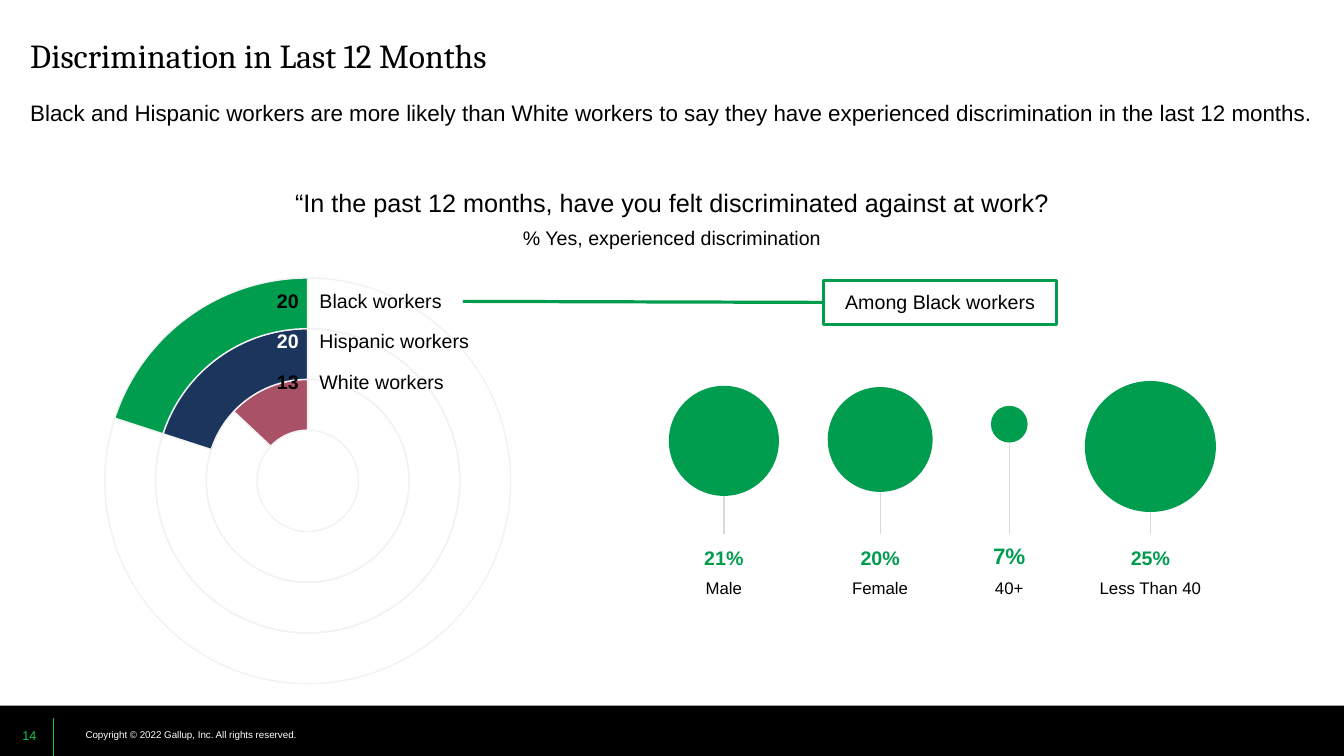
from dataclasses import dataclass

from lxml import etree
from pptx import Presentation
from pptx.chart.data import CategoryChartData
from pptx.dml.color import RGBColor
from pptx.enum.chart import XL_CHART_TYPE
from pptx.enum.shapes import MSO_CONNECTOR, MSO_SHAPE
from pptx.enum.text import MSO_ANCHOR, MSO_AUTO_SIZE, PP_ALIGN
from pptx.oxml import parse_xml
from pptx.oxml.ns import nsdecls, qn
from pptx.util import Inches, Pt

LEFT, CENTER = PP_ALIGN.LEFT, PP_ALIGN.CENTER
TOP, MIDDLE = MSO_ANCHOR.TOP, MSO_ANCHOR.MIDDLE
RECTANGLE, OVAL = MSO_SHAPE.RECTANGLE, MSO_SHAPE.OVAL
STRAIGHT = MSO_CONNECTOR.STRAIGHT


@dataclass(frozen=True)
class Theme:
    black: str = "000000"
    white: str = "FFFFFF"
    green: str = "009D4F"
    navy: str = "1B355D"
    rose: str = "A95267"
    accent: str = "16C64F"
    ring: str = "F2F2F2"
    stem: str = "D9D9D9"
    serif: str = "Cambria"
    sans: str = "Arial"
    title: int = 24
    question: int = 18
    lead: int = 16
    label: int = 14
    small: int = 12
    chart: int = 10
    number: int = 9
    footer: int = 7


theme = Theme()


def write(shape, lines, align=LEFT, anchor=TOP, insets=(0.1, 0.05, 0.1, 0.05), font=theme.sans):
    """Fill a shape with (text, size, colour, bold) lines, 6 points apart."""
    frame = shape.text_frame
    frame.word_wrap = True
    frame.auto_size = MSO_AUTO_SIZE.NONE
    frame.vertical_anchor = anchor
    frame.margin_left, frame.margin_top, frame.margin_right, frame.margin_bottom = map(Inches, insets)
    for index, (text, size, color, bold) in enumerate(lines):
        paragraph = frame.add_paragraph() if index else frame.paragraphs[0]
        paragraph.alignment = align
        paragraph.space_before = Pt(6 if index else 0)
        run = paragraph.add_run()
        run.text = text
        run.font.name = font
        run.font.size = Pt(size)
        run.font.bold = bold
        run.font.color.rgb = RGBColor.from_string(color)


def add_line(start, end, color, width):
    connector = slide.shapes.add_connector(STRAIGHT, *map(Inches, start + end))
    connector.line.color.rgb = RGBColor.from_string(color)
    connector.line.width = Pt(width)
    etree.SubElement(connector._element.spPr, qn("a:effectLst"))
    return connector


presentation = Presentation()
presentation.slide_width = Inches(13.33)
presentation.slide_height = Inches(7.5)
slide = presentation.slides.add_slide(presentation.slide_layouts[1])
shapes = slide.shapes

# Footer
footer_bar = shapes.add_shape(RECTANGLE, 0, Inches(7), Inches(13.33), Inches(0.5))
footer_bar.shadow.inherit = False
footer_bar.fill.solid()
footer_bar.fill.fore_color.rgb = RGBColor.from_string(theme.black)
footer_bar.line.fill.background()
copyright_box = shapes.add_textbox(Inches(0.75), Inches(7.18), Inches(3.75), Inches(0.22))
write(copyright_box, [("Copyright © 2022 Gallup, Inc. All rights reserved.", theme.footer, theme.white, False)],
      anchor=MIDDLE)
add_line((0.53, 7.5), (0.53, 7.12), theme.accent, 0.75)
number_box = shapes.add_textbox(0, Inches(7.1), Inches(0.53), Inches(0.4))
write(number_box, [("14", theme.number, theme.accent, False)], CENTER, MIDDLE, (0.15, 0.05, 0.1, 0.05))

# Title and lead sentence
title = shapes.title
title.left, title.top, title.width, title.height = 0, 0, Inches(13.33), Inches(0.91)
write(title, [("Discrimination in Last 12 Months", theme.title, theme.black, False)],
      insets=(0.3, 0.35, 0.3, 0.15), font=theme.serif)

lead = slide.placeholders[1]
lead.left, lead.top, lead.width, lead.height = 0, Inches(0.93), Inches(13.33), Inches(0.52)
lead_properties = lead.text_frame.paragraphs[0]._p.get_or_add_pPr()
lead_properties.set("marL", "0")
lead_properties.set("indent", "0")
etree.SubElement(lead_properties, qn("a:buNone"))
write(lead, [("Black and Hispanic workers are more likely than White workers to say they have "
              "experienced discrimination in the last 12 months.", theme.lead, theme.black, False)],
      insets=(0.3, 0.05, 0.1, 0.2))

# Survey question
question = shapes.add_textbox(Inches(2.68), Inches(1.81), Inches(7.97), Inches(0.72))
write(question, [
    ("“In the past 12 months, have you felt discriminated against at work?", theme.question, theme.black, False),
    ("% Yes, experienced discrimination", theme.label, theme.black, False),
], CENTER)

# Ring chart, listed from the outer ring inwards: group, percent, ring, number colour, label top
groups = [
    ("Black workers", 20, theme.green, theme.black, 2.82),
    ("Hispanic workers", 20, theme.navy, theme.white, 3.21),
    ("White workers", 13, theme.rose, theme.black, 3.62),
]
chart_data = CategoryChartData()
chart_data.categories = ["1", "2"]
for name, percent, *_ in reversed(groups):
    chart_data.add_series(name, (100 - percent, percent))
chart = shapes.add_chart(XL_CHART_TYPE.DOUGHNUT, Inches(0.51), Inches(2.73),
                         Inches(5.07), Inches(4.07), chart_data).chart
chart.has_legend = False
chart.has_title = False
chart.font.name = theme.sans
chart.font.size = Pt(theme.chart)
chart.font.color.rgb = RGBColor.from_string(theme.black)
plot = chart.plots[0]
plot.has_data_labels = False
plot.vary_by_categories = False
plot._element.find(qn("c:holeSize")).set("val", "40")

for series, group in zip(plot.series, reversed(groups)):
    for index in range(2):
        point_format = series.points[index].format
        point_format.line.color.rgb = RGBColor.from_string(theme.ring)
        point_format.line.width = Pt(1)
        if index:
            point_format.fill.solid()
            point_format.fill.fore_color.rgb = RGBColor.from_string(group[2])
        else:
            point_format.fill.background()

plot_area = chart._chartSpace.chart.plotArea
for layout in plot_area.findall(qn("c:layout")):
    plot_area.remove(layout)
plot_area.insert(0, parse_xml(
    f'<c:layout {nsdecls("c")}><c:manualLayout><c:layoutTarget val="inner"/>'
    '<c:xMode val="edge"/><c:yMode val="edge"/><c:x val="0.104"/><c:y val="0.007"/>'
    '<c:w val="0.795"/><c:h val="0.989"/></c:manualLayout></c:layout>'))

for name, percent, _, number_color, top in groups:
    value_box = shapes.add_textbox(Inches(2.6), Inches(top), Inches(0.51), Inches(0.34))
    write(value_box, [(str(percent), theme.label, number_color, True)], CENTER)
    name_box = shapes.add_textbox(Inches(3.07), Inches(top), Inches(3.05), Inches(0.34))
    write(name_box, [(name, theme.label, theme.black, False)])

# Callout for the bubbles
callout = shapes.add_shape(RECTANGLE, Inches(8.17), Inches(2.78), Inches(2.31), Inches(0.44))
callout.shadow.inherit = False
callout.fill.background()
callout.line.color.rgb = RGBColor.from_string(theme.green)
callout.line.width = Pt(2.3)
write(callout, [("Among Black workers", theme.label, theme.black, False)], CENTER, insets=(0.1,) * 4)
add_line((4.59, 2.99), (8.17, 3), theme.green, 2.3).end_connect(callout, 1)

# Bubbles: label, percent, centre, bottom, label width, label height, percent size
bubbles = [
    ("Male", 21, 7.18, 4.92, 1.5, 0.62, theme.label),
    ("Female", 20, 8.73, 4.88, 1.5, 0.62, theme.label),
    ("40+", 7, 10.01, 4.39, 1.5, 0.66, theme.lead),
    ("Less Than 40", 25, 11.41, 5.08, 1.64, 0.62, theme.label),
]
for name, percent, center, bottom, width, height, percent_size in bubbles:
    label = shapes.add_textbox(Inches(center - width / 2), Inches(5.99 - height), Inches(width), Inches(height))
    write(label, [(f"{percent}%", percent_size, theme.green, True),
                  (name, theme.small, theme.black, False)], CENTER)
    add_line((center, bottom), (center, 5.3), theme.stem, 1)
    diameter = percent * 1.3 / 25
    bubble = shapes.add_shape(OVAL, Inches(center - diameter / 2), Inches(bottom - diameter),
                              Inches(diameter), Inches(diameter))
    bubble.shadow.inherit = False
    bubble.fill.solid()
    bubble.fill.fore_color.rgb = RGBColor.from_string(theme.green)
    bubble.line.fill.background()

presentation.save("out.pptx")
